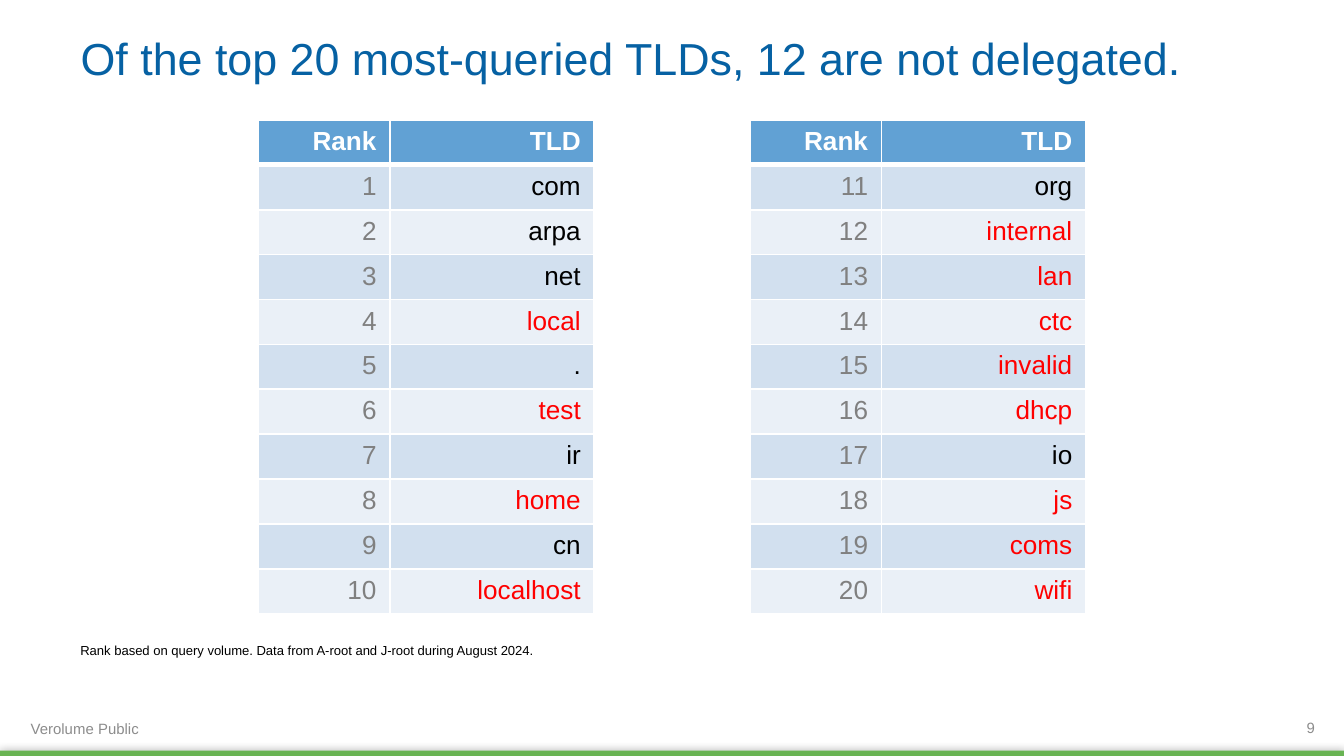
from lxml.etree import SubElement
from pptx import Presentation
from pptx.dml.color import RGBColor
from pptx.enum.shapes import MSO_SHAPE
from pptx.enum.text import MSO_ANCHOR as ANCHOR, MSO_AUTO_SIZE as AUTO, PP_ALIGN as ALIGN
from pptx.oxml import parse_xml
from pptx.oxml.ns import nsdecls, qn
from pptx.util import Cm, Pt

COLORS = {
    "title": "0661A3", "header": "61A1D4", "odd": "D2E0EF", "even": "EAF0F7",
    "white": "FFFFFF", "black": "000000", "undelegated": "FF0000",
    "rank": "808080", "footer": "8C8C8C", "bar": "69B453",
}
TLDS = ["com", "arpa", "net", "local", ".", "test", "ir", "home", "cn", "localhost",
        "org", "internal", "lan", "ctc", "invalid", "dhcp", "io", "js", "coms", "wifi"]
DELEGATED = {"com", "arpa", "net", ".", "ir", "cn", "org", "io"}


class Deck:
    """Hold the style and the current slide, with a method per kind of element."""

    font = "Arial"

    def __init__(self, width, height):
        self.prs = Presentation()
        self.prs.slide_width, self.prs.slide_height = Cm(width), Cm(height)
        self.s = self.prs.slides.add_slide(self.prs.slide_layouts[5])

    def set_text(self, tf, text, size, color, align=ALIGN.LEFT, bold=False):
        tf.text = text
        p = tf.paragraphs[0]
        p.alignment = align
        f = p.runs[0].font
        f.name, f.size, f.bold = self.font, Pt(size), bold
        f.color.rgb = RGBColor.from_string(COLORS[color])

    def paint(self, fill, color):
        fill.solid()
        fill.fore_color.rgb = RGBColor.from_string(COLORS[color])

    def title(self, box, text):
        sp = self.s.shapes.title
        sp.left, sp.top, sp.width, sp.height = map(Cm, box)
        tf = sp.text_frame
        tf.auto_size, tf.vertical_anchor = AUTO.NONE, ANCHOR.MIDDLE
        self.set_text(tf, text, 24, "title")

    def text(self, box, text, size, color, align=ALIGN.LEFT, anchor=ANCHOR.MIDDLE, wrap=True):
        tf = self.s.shapes.add_textbox(*map(Cm, box)).text_frame
        tf.word_wrap, tf.vertical_anchor = wrap, anchor
        self.set_text(tf, text, size, color, align)

    def bar(self, box):
        sp = self.s.shapes.add_shape(MSO_SHAPE.RECTANGLE, *map(Cm, box))
        self.paint(sp.fill, "bar")
        sp.line.fill.background()
        sp.element.spPr.append(parse_xml(
            f'<a:effectLst {nsdecls("a")}><a:outerShdw blurRad="{Pt(5)}" dist="0" dir="0">'
            '<a:srgbClr val="000000"><a:alpha val="40000"/></a:srgbClr>'
            '</a:outerShdw></a:effectLst>'))

    def borders(self, cell, top, bottom):
        tcPr = cell._tc.get_or_add_tcPr()
        for side, width in zip("LRTB", (1, 1, top, bottom)):
            ln = SubElement(tcPr, qn(f"a:ln{side}"), w=str(Pt(width)))
            fill = SubElement(ln, qn("a:solidFill"))
            SubElement(fill, qn("a:srgbClr"), val=COLORS["white"])

    def table(self, left, top, widths, row_height, rows):
        table = self.s.shapes.add_table(
            len(rows), len(widths), Cm(left), Cm(top),
            Cm(sum(widths)), Cm(row_height * len(rows))).table
        table.horz_banding = False
        for column, width in zip(table.columns, widths):
            column.width = Cm(width)
        for i, row in enumerate(rows):
            table.rows[i].height = Cm(row_height)
            band = "header" if i == 0 else "odd" if i % 2 else "even"
            for cell, (text, color) in zip(table.rows[i].cells, row):
                self.borders(cell, 3 if i == 1 else 1, 3 if i == 0 else 1)
                self.paint(cell.fill, band)
                self.set_text(cell.text_frame, text, 14, color, ALIGN.RIGHT, i == 0)


def main():
    deck = Deck(25.4, 14.29)
    deck.bar((0, 14.19, 25.4, 0.1))
    deck.text((0.33, 13.59, 8.43, 0.38), "Verolume Public", 8, "footer")
    deck.title((1.27, 0.5, 22.86, 1.18), "Of the top 20 most-queried TLDs, 12 are not delegated.")
    deck.text((24.1, 13.61, 1, 0.3), "9", 8, "footer", ALIGN.RIGHT)
    for start, left in ((0, 4.88), (10, 14.17)):
        rows = [(("Rank", "white"), ("TLD", "white"))]
        for rank, tld in enumerate(TLDS[start:start + 10], start + 1):
            color = "black" if tld in DELEGATED else "undelegated"
            rows.append(((str(rank), "rank"), (tld, color)))
        deck.table(left, 2.27, (2.49, 3.86), 0.81, rows)
    deck.text((1.27, 12.01, 9.17, 0.56),
              "Rank based on query volume. Data from A-root and J-root during August 2024.",
              7, "black", anchor=ANCHOR.TOP, wrap=False)
    deck.prs.save("out.pptx")


if __name__ == "__main__":
    main()
